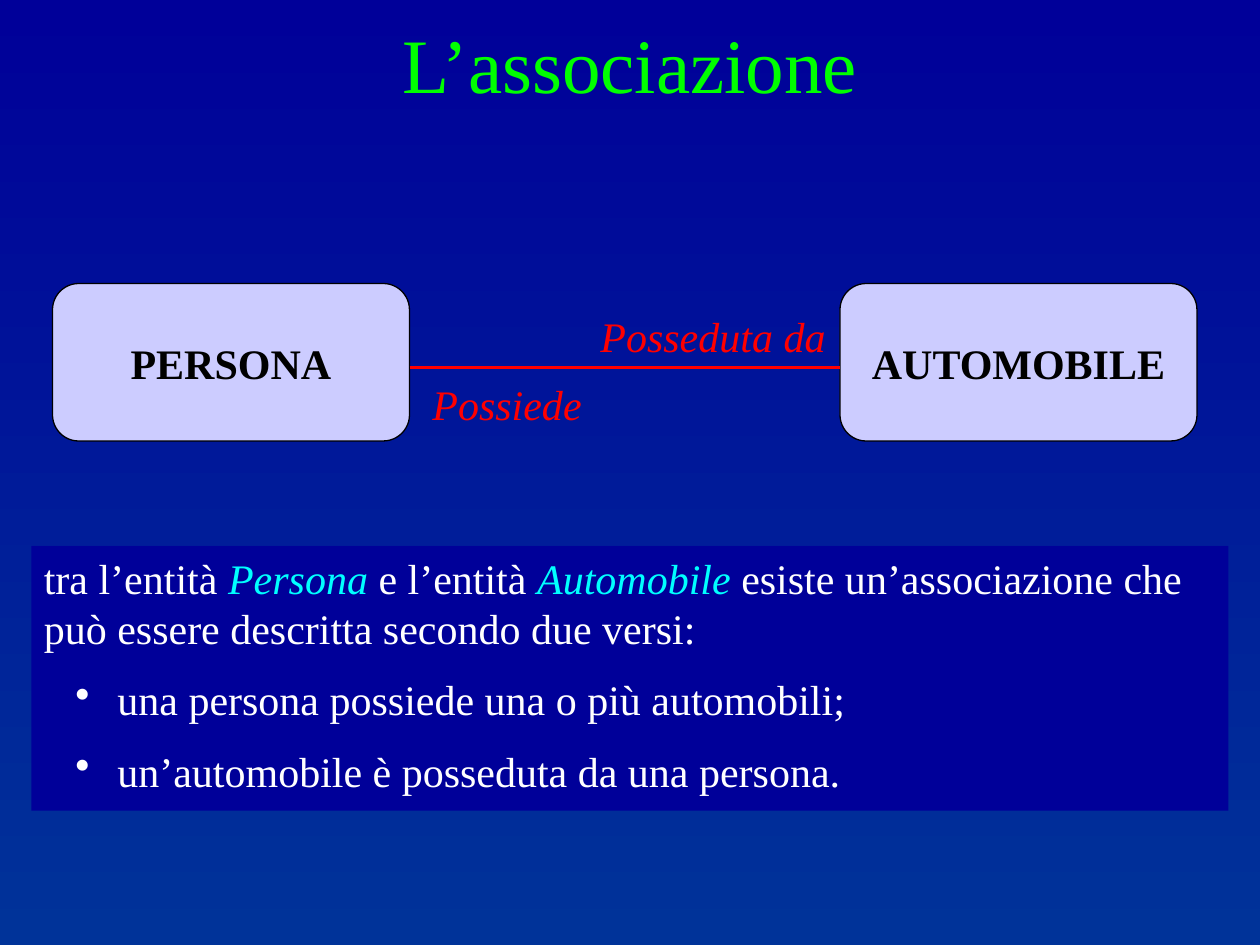
from dataclasses import dataclass

from lxml.etree import SubElement
from pptx import Presentation
from pptx.dml.color import RGBColor
from pptx.enum.shapes import MSO_CONNECTOR as Connector, MSO_SHAPE as Shape
from pptx.enum.text import MSO_ANCHOR as Anchor, MSO_AUTO_SIZE as AutoSize, PP_ALIGN as Align
from pptx.oxml.ns import qn
from pptx.util import Inches, Pt

BLUE_TOP = RGBColor(0x00, 0x00, 0x99)
BLUE_BOTTOM = RGBColor(0x00, 0x33, 0x99)
LAVENDER = RGBColor(0xCC, 0xCC, 0xFF)
BLACK = RGBColor(0x00, 0x00, 0x00)
WHITE = RGBColor(0xFF, 0xFF, 0xFF)
RED = RGBColor(0xFF, 0x00, 0x00)
GREEN = RGBColor(0x00, 0xFF, 0x00)
CYAN = RGBColor(0x00, 0xFF, 0xFF)

FONT = "Times New Roman"
CELL = Inches(10) / 120  # grid of 120 columns by 90 rows


@dataclass(frozen=True)
class Area:
    column: float
    row: float
    columns: float
    rows: float

    def lengths(self) -> list[int]:
        return [grid(n) for n in (self.column, self.row, self.columns, self.rows)]


@dataclass(frozen=True)
class Entity:
    name: str
    area: Area


@dataclass(frozen=True)
class Label:
    text: str
    area: Area
    style: dict
    align: Align = Align.LEFT
    wrap: bool = False


BODY = dict(name=FONT, size=Pt(24), italic=False)
TERM = BODY | dict(italic=True)

PERSON = Entity("PERSONA", Area(5, 27, 34, 15))
CAR = Entity("AUTOMOBILE", Area(80, 27, 34, 15))
LINK_ROW = 35
LABELS = [
    Label("Possiede", Area(40, 35.5, 16.7, 6), TERM | dict(color=RED)),
    Label("Posseduta da", Area(56, 29, 23.9, 6), TERM | dict(color=RED)),
    Label("L’associazione", Area(7, 1, 106, 10),
          BODY | dict(size=Pt(44), color=GREEN), Align.CENTER, True),
]
PANEL = Area(3, 52, 114, 25.2)
INTRO = [
    ("tra l’entità ", False),
    ("Persona", True),
    (" e l’entità ", False),
    ("Automobile", True),
    (" esiste un’associazione che può essere descritta secondo due versi:", False),
]
DIRECTIONS = ["una persona possiede una o più automobili;",
              "un’automobile è posseduta da una persona."]


def grid(cells: float) -> int:
    return round(cells * CELL)


def add_span(para, text: str, style: dict) -> None:
    span = para.add_run()
    span.text = text
    for key, value in style.items():
        if key == "color":
            span.font.color.rgb = value
        else:
            setattr(span.font, key, value)


def add_box(slide, kind: Shape, area: Area, fill: RGBColor):
    box = slide.shapes.add_shape(kind, *area.lengths())
    box.shadow.inherit = False
    box.fill.solid()
    box.fill.fore_color.rgb = fill
    return box


def add_entity(slide, entity: Entity) -> None:
    box = add_box(slide, Shape.ROUNDED_RECTANGLE, entity.area, LAVENDER)
    box.line.color.rgb = BLACK
    box.line.width = Pt(0.75)
    box.text_frame.word_wrap = False
    box.text_frame.vertical_anchor = Anchor.MIDDLE
    para = box.text_frame.paragraphs[0]
    para.alignment = Align.CENTER
    add_span(para, entity.name, BODY | dict(bold=True, color=BLACK))


def add_link(slide, start: Entity, end: Entity) -> None:
    left = grid(start.area.column + start.area.columns)
    row = grid(LINK_ROW)
    link = slide.shapes.add_connector(
        Connector.STRAIGHT, left, row, grid(end.area.column), row)
    link.line.color.rgb = RED
    link.line.width = Pt(2)
    SubElement(link._element.spPr, qn("a:effectLst"))


def add_label(slide, label: Label) -> None:
    frame = slide.shapes.add_textbox(*label.area.lengths()).text_frame
    frame.word_wrap = label.wrap
    frame.auto_size = AutoSize.SHAPE_TO_FIT_TEXT
    para = frame.paragraphs[0]
    para.alignment = label.align
    add_span(para, label.text, label.style)


def add_bullet(para) -> None:
    properties = para._p.get_or_add_pPr()
    properties.set("marL", str(grid(7)))
    properties.set("indent", str(grid(-4)))
    SubElement(properties, qn("a:buChar"), char="•")


def add_panel(slide) -> None:
    panel = add_box(slide, Shape.RECTANGLE, PANEL, BLUE_TOP)
    panel.line.fill.background()
    frame = panel.text_frame
    frame.word_wrap = True
    frame.auto_size = AutoSize.SHAPE_TO_FIT_TEXT
    frame.vertical_anchor = Anchor.TOP
    intro = frame.paragraphs[0]
    intro.alignment = Align.LEFT
    for text, is_term in INTRO:
        style = TERM | dict(color=CYAN) if is_term else BODY | dict(color=WHITE)
        add_span(intro, text, style)
    for text in DIRECTIONS:
        para = frame.add_paragraph()
        para.alignment = Align.LEFT
        para.level = 1
        para.space_before = Pt(12)
        add_bullet(para)
        add_span(para, text, BODY | dict(color=WHITE))


def paint_background(slide) -> None:
    fill = slide.background.fill
    fill.gradient()
    fill.gradient_angle = 270
    for stop, color, position in zip(fill.gradient_stops, (BLUE_TOP, BLUE_BOTTOM), (0, 1)):
        stop.color.rgb = color
        stop.position = position


def main() -> None:
    deck = Presentation()
    deck.slide_width, deck.slide_height = grid(120), grid(90)
    page = deck.slides.add_slide(deck.slide_layouts[6])
    paint_background(page)

    # Entities and their association
    for entity in (PERSON, CAR):
        add_entity(page, entity)
    add_link(page, PERSON, CAR)

    # Link labels and title
    for label in LABELS:
        add_label(page, label)

    # Explanation
    add_panel(page)
    deck.save("out.pptx")


if __name__ == "__main__":
    main()
